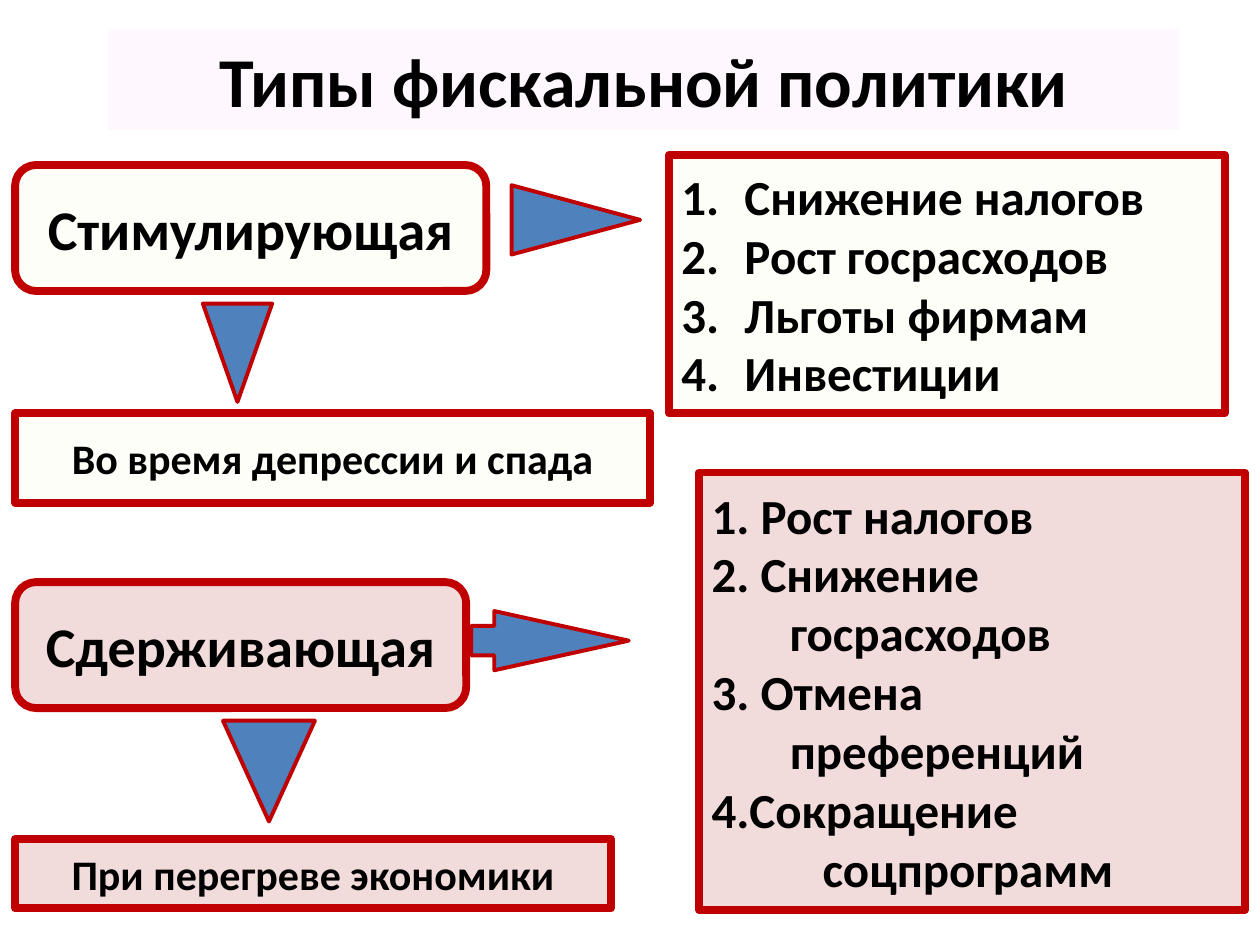
from dataclasses import dataclass

from lxml.etree import SubElement
from pptx import Presentation
from pptx.dml.color import RGBColor
from pptx.enum.shapes import MSO_SHAPE
from pptx.enum.text import MSO_ANCHOR, PP_ALIGN
from pptx.oxml.ns import qn
from pptx.util import Inches, Pt

COLORS = {
    "text": "000000",
    "title": "FFF7FE",
    "stimulus": "FEFEF8",
    "restraint": "F2DCDB",
    "border": "C00000",
    "arrow": "4F81BD",
}
FONT = "Calibri"
CELL = 0.1
LEFT_EDGE = 1.2
NUMBER_INDENT = 0.5


@dataclass(frozen=True)
class Area:
    column: float
    row: float
    columns: float
    rows: float


@dataclass(frozen=True)
class Line:
    text: str
    indent: float = 0


@dataclass(frozen=True)
class Box:
    area: Area
    fill: str
    lines: tuple[Line, ...]
    size: int
    kind: MSO_SHAPE = MSO_SHAPE.RECTANGLE
    border: float = 4.5
    centered: bool = True
    numbered: bool = False


@dataclass(frozen=True)
class Arrow:
    area: Area
    kind: MSO_SHAPE
    head: float


def add_block(slide, kind: MSO_SHAPE, area: Area, fill: str, border: float):
    block = slide.shapes.add_shape(
        kind,
        Inches(area.column * CELL),
        Inches(area.row * CELL),
        Inches(area.columns * CELL),
        Inches(area.rows * CELL),
    )
    block.shadow.inherit = False
    block.fill.solid()
    block.fill.fore_color.rgb = RGBColor.from_string(COLORS[fill])
    if border:
        block.line.color.rgb = RGBColor.from_string(COLORS["border"])
        block.line.width = Pt(border)
    else:
        block.line.fill.background()
    return block


def write(frame, lines: tuple[Line, ...], *, size: int, centered: bool, numbered: bool) -> None:
    frame.word_wrap = True
    frame.vertical_anchor = MSO_ANCHOR.MIDDLE
    for index, line in enumerate(lines):
        paragraph = frame.add_paragraph() if index else frame.paragraphs[0]
        paragraph.alignment = PP_ALIGN.CENTER if centered else PP_ALIGN.LEFT
        run = paragraph.add_run()
        run.text = line.text
        run.font.name = FONT
        run.font.size = Pt(size)
        run.font.bold = True
        run.font.color.rgb = RGBColor.from_string(COLORS["text"])
        properties = paragraph._p.get_or_add_pPr()
        if numbered:
            properties.set("marL", str(Inches(NUMBER_INDENT)))
            properties.set("indent", str(-Inches(NUMBER_INDENT)))
            SubElement(properties, qn("a:buFont"), typeface="+mj-lt")
            SubElement(properties, qn("a:buAutoNum"), type="arabicPeriod")
        elif line.indent:
            properties.set("marL", str(Inches(line.indent)))
            properties.set("indent", "0")


def draw_box(slide, box: Box) -> None:
    block = add_block(slide, box.kind, box.area, box.fill, box.border)
    write(block.text_frame, box.lines, size=box.size, centered=box.centered, numbered=box.numbered)


def draw_arrow(slide, arrow: Arrow) -> None:
    block = add_block(slide, arrow.kind, arrow.area, "arrow", 2.25)
    block.adjustments[0] = 0.5
    block.adjustments[1] = arrow.head


TITLE = Box(Area(8.6, 2.3, 85, 8), "title", (Line("Типы фискальной политики"),), 40, border=0)

POLICIES = (
    Box(Area(LEFT_EDGE, 13.1, 37.4, 10), "stimulus", (Line("Стимулирующая"),), 32,
        kind=MSO_SHAPE.ROUNDED_RECTANGLE),
    Box(Area(LEFT_EDGE, 46.2, 35.8, 10), "restraint", (Line("Сдерживающая"),), 32,
        kind=MSO_SHAPE.ROUNDED_RECTANGLE),
)

MEASURES = (
    Box(Area(53.1, 12.3, 44.1, 20.5), "stimulus", (
        Line("Снижение налогов"),
        Line("Рост госрасходов"),
        Line("Льготы фирмам"),
        Line("Инвестиции"),
    ), 28, centered=False, numbered=True),
    Box(Area(55.5, 37.5, 43.3, 34.7), "restraint", (
        Line("1. Рост налогов"),
        Line("2. Снижение"),
        Line("госрасходов", 0.62),
        Line("3. Отмена"),
        Line("преференций", 0.62),
        Line("4.Сокращение"),
        Line("соцпрограмм", 0.88),
    ), 28, centered=False),
)

OCCASIONS = (
    Box(Area(LEFT_EDGE, 32.8, 50.4, 7.1), "stimulus", (Line("Во время депрессии и спада"),), 24),
    Box(Area(LEFT_EDGE, 66.6, 47.3, 5.5), "restraint", (Line("При перегреве экономики"),), 24),
)

ARROWS = (
    Arrow(Area(40.6, 14.7, 10.2, 5.5), MSO_SHAPE.RIGHT_ARROW, 1.97),
    Arrow(Area(37.4, 48.5, 12.5, 4.7), MSO_SHAPE.RIGHT_ARROW, 2.27),
    Arrow(Area(16.1, 24.1, 5.5, 7.8), MSO_SHAPE.DOWN_ARROW, 1.51),
    Arrow(Area(17.7, 57.2, 7.3, 8), MSO_SHAPE.DOWN_ARROW, 1.97),
)


def main() -> None:
    presentation = Presentation()
    presentation.slide_width = Inches(10)
    presentation.slide_height = Inches(7.5)
    slide = presentation.slides.add_slide(presentation.slide_layouts[6])
    for box in (TITLE, *POLICIES):
        draw_box(slide, box)
    for arrow in ARROWS:
        draw_arrow(slide, arrow)
    for box in (*MEASURES, *OCCASIONS):
        draw_box(slide, box)
    presentation.save("out.pptx")


if __name__ == "__main__":
    main()
